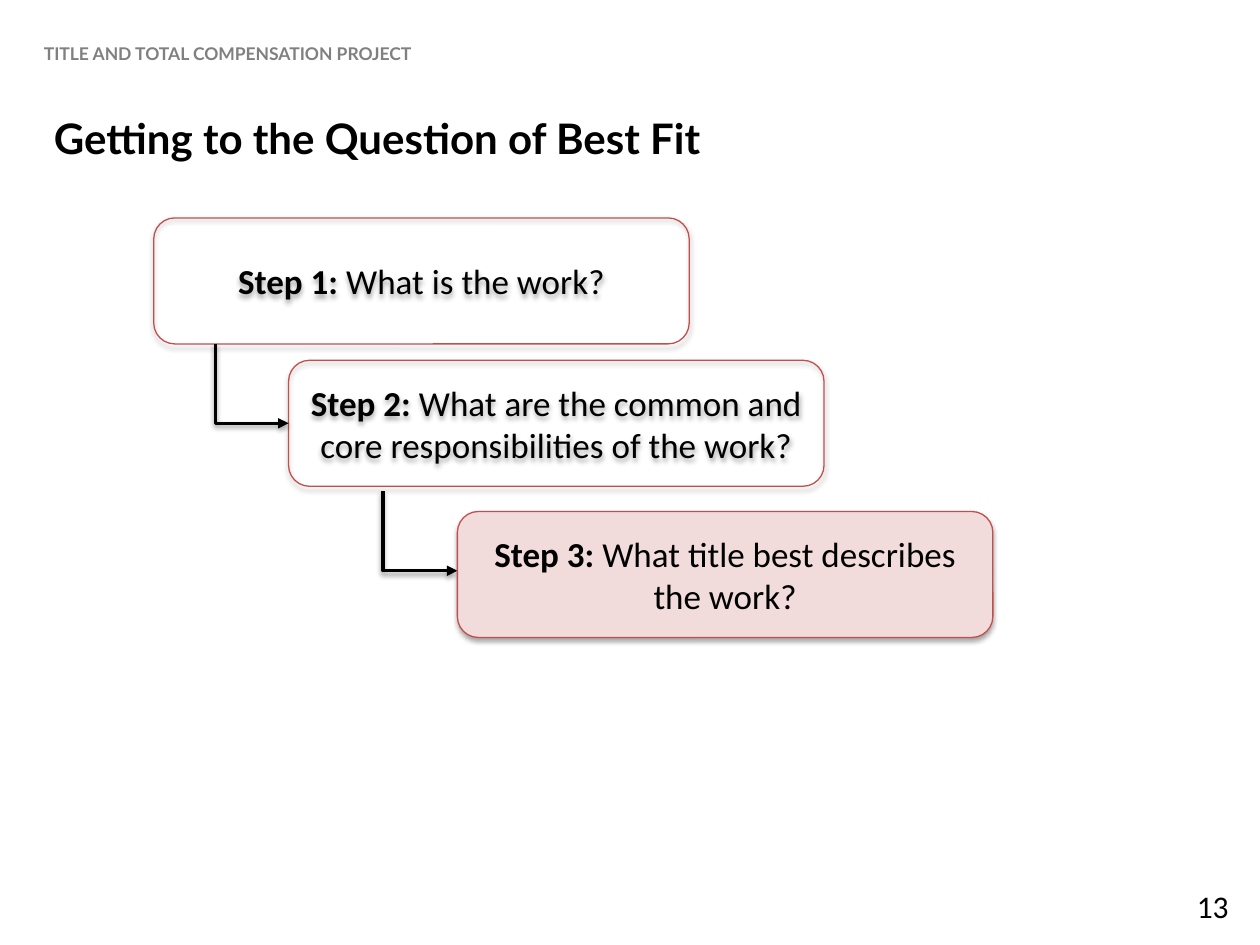
from lxml import etree
from pptx import Presentation
from pptx.dml.color import RGBColor
from pptx.enum.shapes import MSO_CONNECTOR as Link, MSO_SHAPE as Preset
from pptx.enum.text import MSO_ANCHOR as Anchor, PP_ALIGN as Align
from pptx.oxml.ns import qn
from pptx.util import Inches, Pt

BLACK, GRAY, RED, PINK = "000000", "808080", "C0504D", "F2DCDB"
STEP_WIDTH, STEP_HEIGHT = 4.25, 1
STEPS = [
    (1.22, 1.73, "Step 1:", " What is the work?", None),
    (2.29, 2.86, "Step 2:", " What are the common and core responsibilities of the work?", None),
    (3.63, 4.06, "Step 3:", " What title best describes the work?", PINK),
]
ARROWS = [(3.04, 3.9, 3.63, 4.53), (1.71, 2.73, 2.29, 3.36)]


def color(value):
    """Turn a hex string into a colour."""
    return RGBColor.from_string(value)


def set_font(font, name, size, value, bold=None):
    """Set the face, size, colour and weight of a font."""
    font.name, font.size, font.bold = name, Pt(size), bold
    font.color.rgb = color(value)


def add_shadow(item, distance, opacity):
    """Give a shape or connector a soft shadow straight below it."""
    properties = item._element.spPr
    for old in properties.findall(qn("a:effectLst")):
        properties.remove(old)
    effects = etree.SubElement(properties, qn("a:effectLst"))
    shadow = etree.SubElement(
        effects, qn("a:outerShdw"), blurRad=str(Pt(3.1)), dist=str(Pt(distance)),
        dir="5400000", rotWithShape="0")
    tone = etree.SubElement(shadow, qn("a:srgbClr"), val=BLACK)
    etree.SubElement(tone, qn("a:alpha"), val=str(opacity * 1000))


def add_label(page, box, text, name, size, value, bold=None, align=Align.LEFT):
    """Place one paragraph of text in a box and return its shape."""
    label = page.shapes.add_textbox(*map(Inches, box))
    label.text_frame.word_wrap = True
    para = label.text_frame.paragraphs[0]
    para.text, para.alignment = text, align
    set_font(para.font, name, size, value, bold)
    return label


def add_header(page, box):
    """Place the project name along the top of the page."""
    header = add_label(page, box, "TITLE AND TOTAL COMPENSATION PROJECT", "Lato", 10, GRAY, True)
    frame = header.text_frame
    frame.vertical_anchor = Anchor.MIDDLE
    frame.margin_right = Inches(0.5)
    indent = frame.paragraphs[0]._p.get_or_add_pPr()
    indent.set("marL", str(Inches(0.25)))
    indent.set("indent", "0")


def add_step(page, box, heading, question, fill):
    """Place one rounded step with a bold heading and its question."""
    step = page.shapes.add_shape(Preset.ROUNDED_RECTANGLE, *map(Inches, box))
    if fill:
        step.fill.solid()
        step.fill.fore_color.rgb = color(fill)
    else:
        step.fill.background()
    step.line.color.rgb = color(RED)
    step.line.width = Pt(0.75)
    add_shadow(step, 1.8, 35)
    frame = step.text_frame
    frame.word_wrap = True
    frame.vertical_anchor = Anchor.MIDDLE
    para = frame.paragraphs[0]
    para.alignment = Align.CENTER
    set_font(para.font, "Calibri", 20, BLACK)
    for text, bold in ((heading, True), (question, False)):
        span = para.add_run()
        span.text, span.font.bold = text, bold


def add_arrow(page, left, top, right, bottom):
    """Draw an arrow that runs down and then right, as a turned elbow."""
    middle_x, middle_y = (left + right) / 2, (top + bottom) / 2
    half_run, half_drop = (right - left) / 2, (bottom - top) / 2
    arrow = page.shapes.add_connector(
        Link.ELBOW, Inches(middle_x + half_drop), Inches(middle_y - half_run),
        Inches(middle_x - half_drop), Inches(middle_y + half_run))
    properties = arrow._element.spPr
    properties.find(qn("a:xfrm")).set("rot", str(270 * 60000))
    properties.find(qn("a:prstGeom")).set("prst", "bentConnector2")
    arrow.line.color.rgb = color(BLACK)
    arrow.line.width = Pt(2)
    etree.SubElement(properties.find(qn("a:ln")), qn("a:tailEnd"), type="triangle")
    add_shadow(arrow, 1.6, 38)


def add_staircase(page):
    """Place the three steps and the arrows between them."""
    first_arrow, last_arrow = ARROWS
    add_arrow(page, *first_arrow)
    for left, top, heading, question, fill in STEPS:
        add_step(page, (left, top, STEP_WIDTH, STEP_HEIGHT), heading, question, fill)
    add_arrow(page, *last_arrow)


def main():
    """Build the slide and save it."""
    deck = Presentation()
    deck.slide_width, deck.slide_height = Inches(10), Inches(7.5)
    page = deck.slides.add_slide(deck.slide_layouts[6])
    add_header(page, (0, 0.24, 10, 0.37))
    add_label(page, (8.25, 6.99, 1.6, 0.4), "13", "Calibri", 18, BLACK, align=Align.RIGHT)
    add_label(page, (0.33, 0.84, 9.25, 0.5), "Getting to the Question of Best Fit",
              "Lato", 24, BLACK, True)
    add_staircase(page)
    deck.save("out.pptx")


if __name__ == "__main__":
    main()
